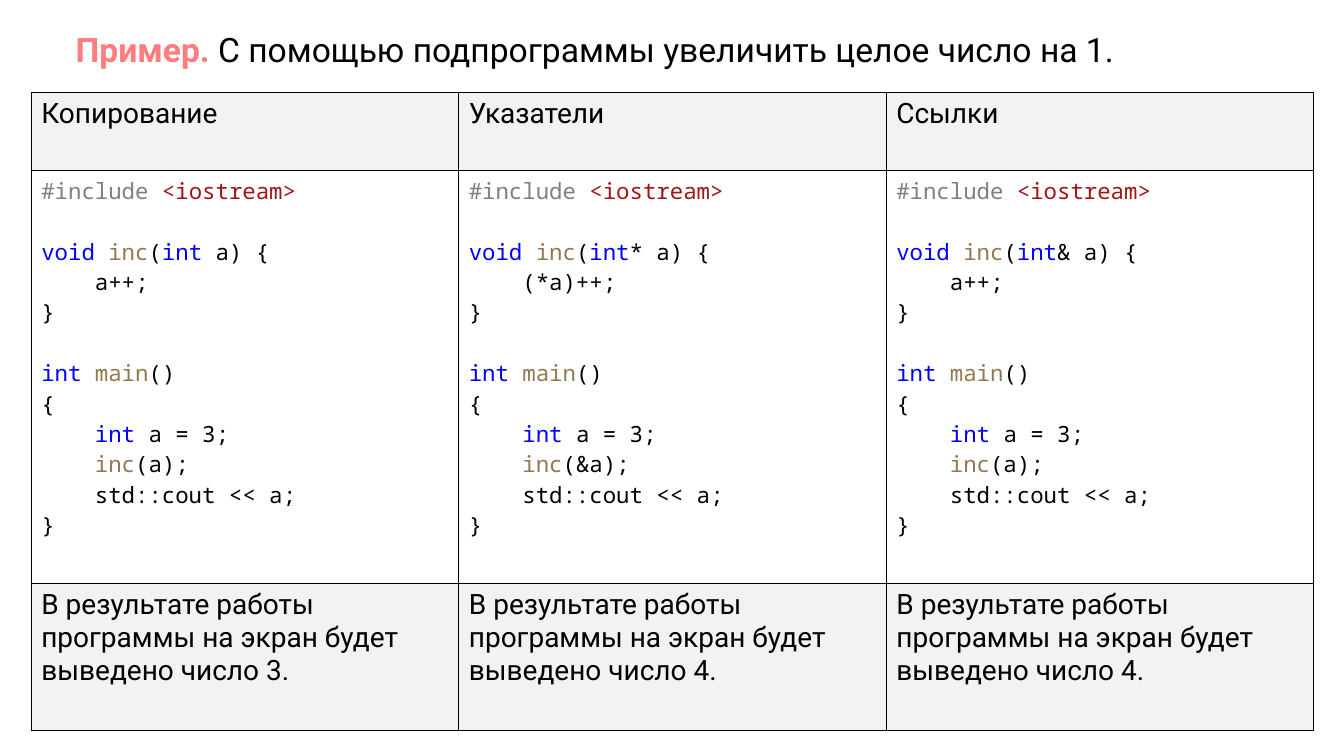
from lxml import etree
from pptx import Presentation
from pptx.dml.color import RGBColor
from pptx.enum import text
from pptx.oxml import ns
from pptx.util import Inches, Pt

COLORS = {"black": "000000", "pink": "FF7C80", "pale": "F2F2F2", "gray": "808080",
          "red": "A31515", "blue": "0000FF", "tan": "927950"}
TOKENS = {"#include": "gray", "<iostream>": "red", "void": "blue", "int": "blue",
          "inc": "tan", "main": "tan"}
CODE = """#include |<iostream>

void |inc|(|int|{mark} a) {{
    {step};
}}

int |main|()
{{
    int| a = 3;
    |inc|({arg});
    std::cout << a;
}}"""
CASES = [("Копирование", "", "a++", "a", 3),
         ("Указатели", "*", "(*a)++", "&a", 4),
         ("Ссылки", "&", "a++", "a", 4)]
LEFT, TOP, WIDTH = 0.31, 0.92, 4.24
HEAD, BODY, FOOT = 0.77, 4.1, 1.46


def style(run, face, size, color, bold=False):
    run.font.name = face
    run.font.size = Pt(size)
    run.font.bold = bold
    run.font.color.rgb = RGBColor.from_string(COLORS[color])


def grid(left, top, cols, rows):
    frame = slide.shapes.add_table(len(rows), cols, Inches(left), Inches(top),
                                   Inches(cols * WIDTH), Inches(sum(rows)))
    table = frame.table
    table.first_row = False
    table.horz_banding = False
    for row, high in zip(table.rows, rows):
        row.height = Inches(high)
    for col in table.columns:
        col.width = Inches(WIDTH)
    for cell in table.iter_cells():
        props = cell._tc.get_or_add_tcPr()
        for side in ("lnL", "lnR", "lnT", "lnB"):
            line = etree.SubElement(props, ns.qn("a:" + side), w=str(Pt(1)))
            fill = etree.SubElement(line, ns.qn("a:solidFill"))
            etree.SubElement(fill, ns.qn("a:srgbClr"), val=COLORS["black"])
        cell.fill.solid()
        cell.fill.fore_color.rgb = RGBColor.from_string(COLORS["pale"])
    return table


deck = Presentation()
deck.slide_width, deck.slide_height = Inches(13.33), Inches(7.5)
slide = deck.slides.add_slide(deck.slide_layouts[5])

title = slide.shapes.title
title.left, title.top = Inches(0.16), Inches(0.24)
title.width, title.height = Inches(13.02), Inches(0.5)
title.text_frame.auto_size = text.MSO_AUTO_SIZE.NONE
title.text_frame.vertical_anchor = text.MSO_ANCHOR.TOP
para = title.text_frame.paragraphs[0]
para.alignment = text.PP_ALIGN.JUSTIFY
props = para._p.get_or_add_pPr()
props.set("marL", "0")
props.set("indent", str(Inches(0.49)))
for part, color, bold in (("Пример. ", "pink", True),
                          ("С помощью подпрограммы увеличить целое число на 1.", "black", False)):
    run = para.add_run()
    run.text = part
    style(run, "Roboto", 24, color, bold)

main = grid(LEFT, TOP, len(CASES), [HEAD, BODY])
for col, (name, mark, step, arg, value) in enumerate(CASES):
    foot = grid(LEFT + col * WIDTH, TOP + HEAD + BODY, 1, [FOOT])
    result = f"В результате работы программы на экран будет выведено число {value}."
    for cell, words in ((main.cell(0, col), name), (foot.cell(0, 0), result)):
        cell.text_frame.text = words
        style(cell.text_frame.paragraphs[0].runs[0], "Roboto", 20, "black")

    cell = main.cell(1, col)
    cell.fill.background()
    lines = CODE.format(mark=mark, step=step, arg=arg).split("\n")
    cell.text_frame.text = "\n".join(lines).replace("|", "")
    for para, line in zip(cell.text_frame.paragraphs, lines):
        para.clear()
        if not line:
            end = etree.SubElement(para._p, ns.qn("a:endParaRPr"), sz="1600")
            etree.SubElement(end, ns.qn("a:latin"), typeface="Noto Sans Mono")
            continue
        for part in line.split("|"):
            run = para.add_run()
            run.text = part
            style(run, "Noto Sans Mono", 16, TOKENS.get(part.strip(), "black"))

deck.save("out.pptx")
